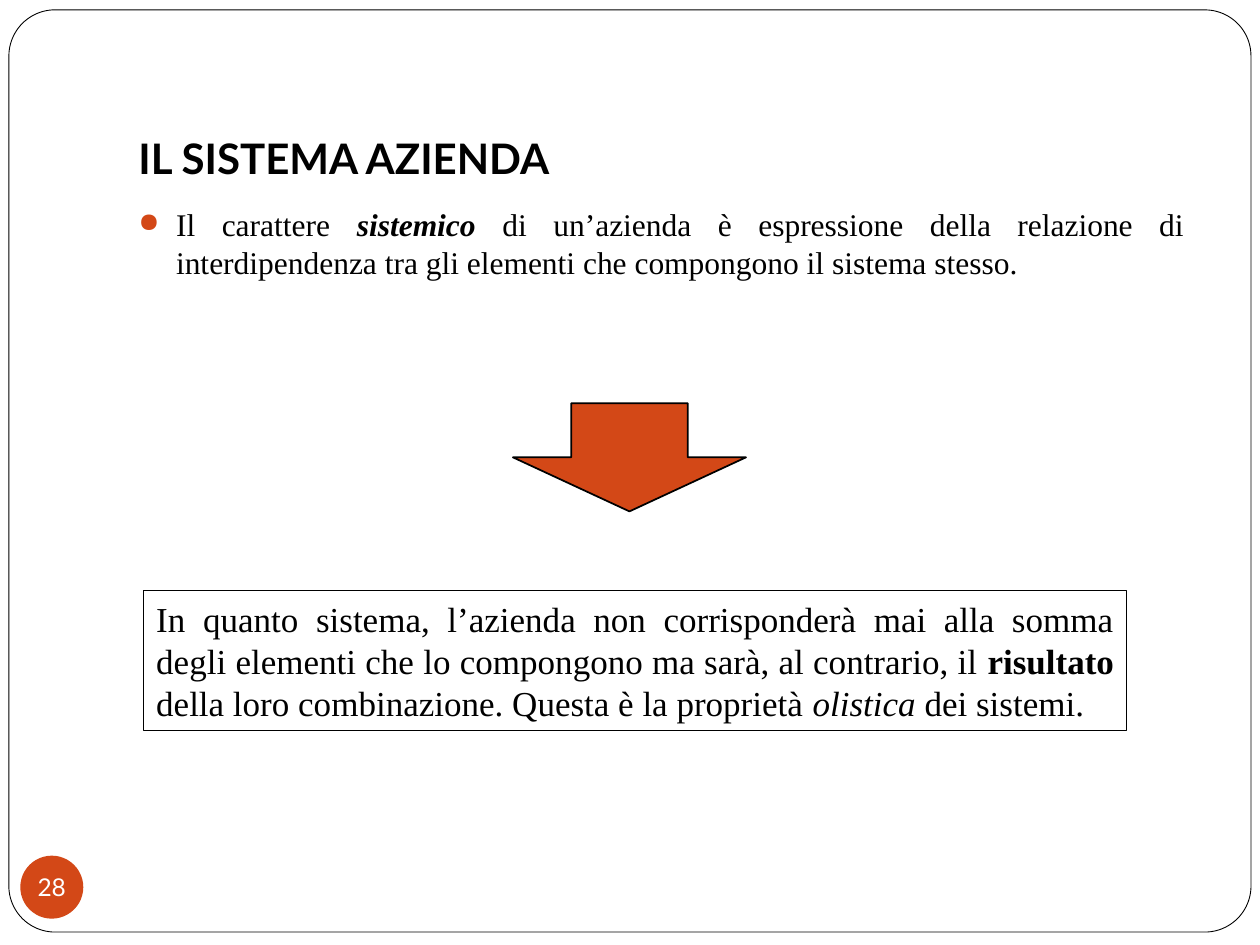
"""Builds the slide on the company seen as a system."""
import pptx
import pptx.dml.color
import pptx.enum.shapes
import pptx.enum.text
import pptx.oxml
import pptx.oxml.ns
import pptx.util
from pptx.util import Cm

TITLE = [("IL SISTEMA AZIENDA", "b")]
PREMISE = [
    ("Il carattere ", ""),
    ("sistemico", "bi"),
    (" di un’azienda è espressione della relazione di interdipendenza tra gli "
     "elementi che compongono il sistema stesso.", ""),
]
CONCLUSION = [
    ("In quanto sistema, l’azienda non corrisponderà mai alla somma degli elementi "
     "che lo compongono ma sarà, al contrario, il ", ""),
    ("risultato ", "b"),
    ("della loro combinazione. Questa è la proprietà ", ""),
    ("olistica ", "i"),
    ("dei sistemi.", ""),
]
PAGE_NUMBER = [("28", "")]

COLORS = {"ink": "000000", "paper": "FFFFFF", "accent": "D34817"}
HEADING_FONT, TEXT_FONT = "Lato", "Times New Roman"
KIND = pptx.enum.shapes.MSO_SHAPE
ALIGN = pptx.enum.text.PP_ALIGN
ANCHOR = pptx.enum.text.MSO_ANCHOR


def color(name):
    return pptx.dml.color.RGBColor.from_string(COLORS[name])


def place(shape, left, top, width, height):
    shape.left, shape.top = Cm(left), Cm(top)
    shape.width, shape.height = Cm(width), Cm(height)


def write(box, spans, *, size, font=TEXT_FONT, ink="ink", align=ALIGN.JUSTIFY,
          anchor=ANCHOR.TOP, insets=(0.25, 0.13, 0.25, 0.13), wrap=True):
    frame = box.text_frame
    frame.auto_size = pptx.enum.text.MSO_AUTO_SIZE.NONE
    frame.word_wrap = wrap
    frame.vertical_anchor = anchor
    (frame.margin_left, frame.margin_top,
     frame.margin_right, frame.margin_bottom) = map(Cm, insets)
    para = frame.paragraphs[0]
    para.alignment = align
    for text, style in spans:
        span = para.add_run()
        span.text = text
        span.font.name = font
        span.font.size = pptx.util.Pt(size)
        span.font.bold = "b" in style
        span.font.italic = "i" in style
        span.font.color.rgb = color(ink)
    return para


def add_bullet(para):
    para.space_before = pptx.util.Pt(5.8)
    properties = para._p.get_or_add_pPr()
    properties.set("marL", str(Cm(0.76)))
    properties.set("indent", str(-Cm(0.76)))
    namespace = pptx.oxml.ns.nsdecls("a")
    for tag in (f'<a:buClr {namespace}><a:srgbClr val="{COLORS["accent"]}"/></a:buClr>',
                f'<a:buSzPct {namespace} val="85000"/>',
                f'<a:buChar {namespace} char="●"/>'):
        properties.append(pptx.oxml.parse_xml(tag))


def add_shape(page, kind, bounds, fill=None, line=None):
    shape = page.shapes.add_shape(kind, *map(Cm, bounds))
    shape.shadow.inherit = False
    if fill:
        shape.fill.solid()
        shape.fill.fore_color.rgb = color(fill)
    else:
        shape.fill.background()
    if line:
        shape.line.color.rgb = color("ink")
        shape.line.width = pptx.util.Pt(line)
    else:
        shape.line.fill.background()
    return shape


def main():
    deck = pptx.Presentation()
    deck.slide_width, deck.slide_height = Cm(25.4), Cm(19.05)
    page = deck.slides.add_slide(deck.slide_layouts[5])

    title = page.shapes.title
    place(title, 2.54, 0.76, 21.59, 3.18)
    write(title, TITLE, size=24, font=HEADING_FONT, align=ALIGN.LEFT,
          anchor=ANCHOR.BOTTOM, insets=(0.25, 0.13, 0.25, 0.25))

    border = add_shape(page, KIND.ROUNDED_RECTANGLE, (0.18, 0.2, 25.04, 18.59), "paper", 0.5)
    border.adjustments[0] = 0.05
    title.element.addprevious(border.element)

    premise = page.shapes.add_textbox(Cm(2.54), Cm(4.01), Cm(21.59), Cm(12.7))
    add_bullet(write(premise, PREMISE, size=18))

    add_shape(page, KIND.DOWN_ARROW, (10.34, 8.13, 4.7, 2.18), "accent", 1)

    conclusion = add_shape(page, KIND.RECTANGLE, (2.9, 11.91, 19.81, 2.82), line=0.75)
    write(conclusion, CONCLUSION, size=20)

    badge = add_shape(page, KIND.OVAL, (0.41, 17.25, 1.27, 1.27), "accent")
    write(badge, PAGE_NUMBER, size=14, font=HEADING_FONT, ink="paper", align=ALIGN.CENTER,
          anchor=ANCHOR.MIDDLE, insets=(0, 0, 0, 0), wrap=False)

    deck.save("out.pptx")


if __name__ == "__main__":
    main()
